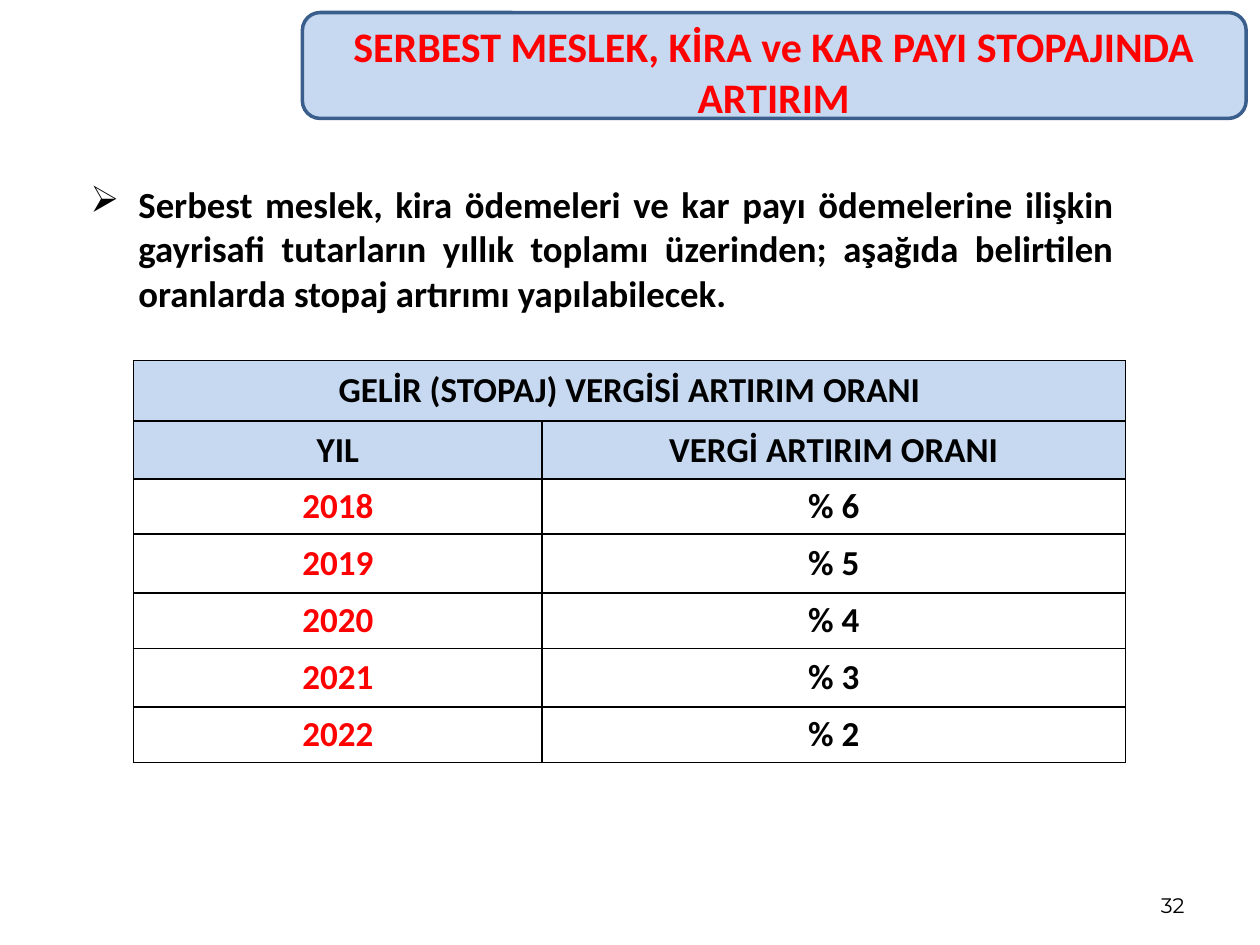
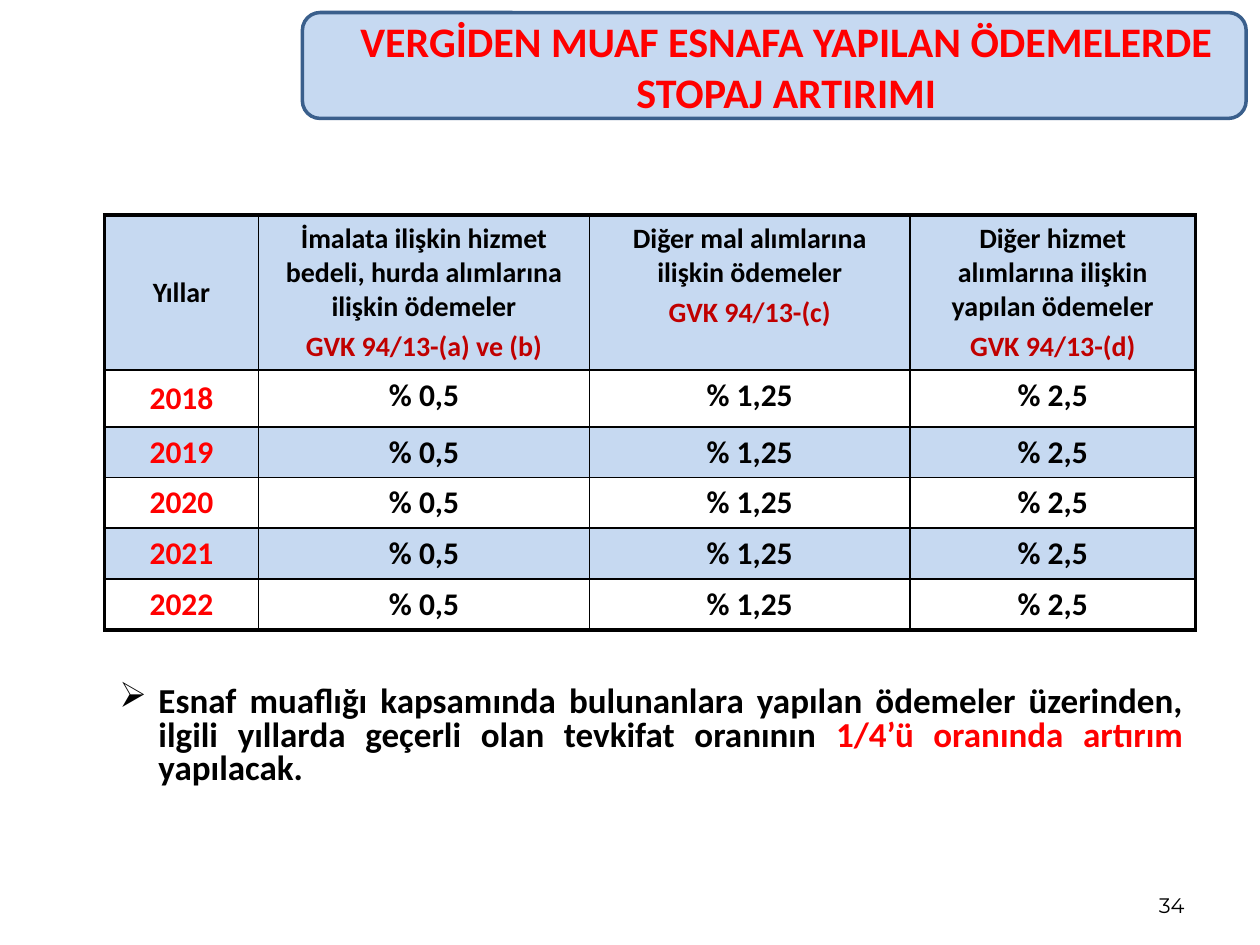
"""Two slides on withholding tax increase rates, each with a title band, a rate table and a note."""
import pptx
import pptx.dml.color
import pptx.enum.shapes
import pptx.enum.text
import pptx.oxml
import pptx.oxml.ns
import pptx.util

Pt = pptx.util.Pt
ALIGN = pptx.enum.text.PP_ALIGN
ANCHOR = pptx.enum.text.MSO_ANCHOR
COLOURS = {"band": "C6D9F1", "edge": "3A5F8C", "red": "FF0000",
           "dark_red": "C00000", "black": "000000"}
YEARS = ["2018", "2019", "2020", "2021", "2022"]


def rgb(name):
    return pptx.dml.color.RGBColor.from_string(COLOURS[name])


def style(paragraph, size, colour, align, font="Calibri", bold=True):
    paragraph.alignment = align
    for run in paragraph.runs:
        run.font.name = font
        run.font.size = Pt(size)
        run.font.bold = bold
        run.font.color.rgb = rgb(colour)


slides = [
    {
        "title": "SERBEST MESLEK, KİRA ve KAR PAYI STOPAJINDA ARTIRIM",
        "title_box": (178.6, 20.9, 527, 39.6),
        "number": "32",
        "note": ["Serbest meslek, kira ödemeleri ve kar payı ödemelerine ilişkin gayrisafi "
                 "tutarların yıllık toplamı üzerinden; aşağıda belirtilen oranlarda stopaj "
                 "artırımı yapılabilecek."],
        "note_box": (8.6, 100.1, 635, 83.5),
        "note_size": 21, "note_spacing": 1, "note_anchor": ANCHOR.MIDDLE,
        "note_indent": (63.4, 27.4),
        "table_at": (76.4, 205.9),
        "columns": [233.4, 333.4],
        "row_heights": [34.8, 33.1, 31.5, 33.7, 31.5, 33.7, 31.5],
        "rows": [["GELİR (STOPAJ) VERGİSİ ARTIRIM ORANI", ""], ["YIL", "VERGİ ARTIRIM ORANI"]]
                + [[year, f"% {6 - i}"] for i, year in enumerate(YEARS)],
        "header_rows": 2, "header_size": 20, "body_size": 20,
        "banded_rows": [0, 1], "value_anchor": ANCHOR.MIDDLE, "frame_width": 1,
    },
    {
        "title": "VERGİDEN MUAF ESNAFA YAPILAN ÖDEMELERDE STOPAJ ARTIRIMI",
        "title_box": (178.6, 15.1, 541.4, 45.4),
        "number": "34",
        "note": ["Esnaf muaflığı kapsamında bulunanlara yapılan ödemeler üzerinden, ilgili "
                 "yıllarda geçerli olan tevkifat oranının ",
                 "1/4’ü oranında artırım", " yapılacak."],
        "note_box": (54, 388.8, 629.3, 62.6),
        "note_size": 20, "note_spacing": 0.8, "note_anchor": ANCHOR.TOP,
        "note_indent": (29.5, 22.3),
        "table_at": (59.8, 122.9),
        "columns": [87.8, 189.4, 182.9, 163.4],
        "row_heights": [88.6, 32.4, 28.8, 29.1, 29.1, 29.1],
        "rows": [["Yıllar",
                  "İmalata ilişkin hizmet bedeli, hurda alımlarına ilişkin ödemeler\n"
                  "GVK 94/13-(a) ve (b)",
                  "Diğer mal alımlarına ilişkin ödemeler\nGVK 94/13-(c)",
                  "Diğer hizmet alımlarına ilişkin yapılan ödemeler\nGVK 94/13-(d)"]]
                + [[year, "% 0,5", "% 1,25", "% 2,5"] for year in YEARS],
        "header_rows": 1, "header_size": 16, "body_size": 18,
        "banded_rows": [0, 2, 4], "value_anchor": ANCHOR.TOP, "frame_width": 2.25,
    },
]

deck = pptx.Presentation()
deck.slide_width, deck.slide_height = Pt(720), Pt(540)

for content in slides:
    slide = deck.slides.add_slide(deck.slide_layouts[6])

    band = slide.shapes.add_shape(pptx.enum.shapes.MSO_SHAPE.ROUNDED_RECTANGLE,
                                  Pt(172.8), Pt(7.2), Pt(539.3), Pt(60.5))
    band.shadow.inherit = False
    band.fill.solid()
    band.fill.fore_color.rgb = rgb("band")
    band.line.color.rgb = rgb("edge")
    band.line.width = Pt(2)

    title = slide.shapes.add_textbox(*map(Pt, content["title_box"])).text_frame
    title.word_wrap = True
    title.vertical_anchor = ANCHOR.MIDDLE
    title.text = content["title"]
    style(title.paragraphs[0], 24, "red", ALIGN.CENTER)

    page_number = slide.shapes.add_textbox(Pt(516.2), Pt(491.8), Pt(167.8), Pt(36)).text_frame
    page_number.word_wrap = True
    page_number.vertical_anchor = ANCHOR.BOTTOM
    page_number.text = content["number"]
    style(page_number.paragraphs[0], 12, "black", ALIGN.RIGHT, "Montserrat", False)

    rows, columns = content["rows"], content["columns"]
    heights = content["row_heights"]
    rates = slide.shapes.add_table(len(rows), len(columns), *map(Pt, content["table_at"]),
                                   Pt(sum(columns)), Pt(sum(heights))).table
    rates.first_row = rates.horz_banding = False
    for column, width in zip(rates.columns, columns):
        column.width = Pt(width)
    for r, (row, height) in enumerate(zip(rows, heights)):
        rates.rows[r].height = Pt(height)
        is_header = r < content["header_rows"]
        for c, text in enumerate(row):
            cell = rates.cell(r, c)
            cell.text = text
            cell.vertical_anchor = ANCHOR.MIDDLE if c == 0 else content["value_anchor"]
            for p, paragraph in enumerate(cell.text_frame.paragraphs):
                if p:
                    paragraph.space_before = Pt(3.2)
                colour = "dark_red" if p else "red" if c == 0 and not is_header else "black"
                size = content["header_size"] if is_header else content["body_size"]
                style(paragraph, size, colour, ALIGN.CENTER)
            outer_sides = {"L": c == 0, "R": c == len(columns) - 1,
                           "T": r == 0, "B": r == len(rows) - 1}
            for side, is_outer in outer_sides.items():
                width = Pt(content["frame_width"] if is_outer else 1)
                cell._tc.get_or_add_tcPr().append(pptx.oxml.parse_xml(
                    f'<a:ln{side} {pptx.oxml.ns.nsdecls("a")} w="{width}"><a:solidFill>'
                    f'<a:srgbClr val="{COLOURS["black"]}"/></a:solidFill></a:ln{side}>'))
            if r in content["banded_rows"]:
                cell.fill.solid()
                cell.fill.fore_color.rgb = rgb("band")
            else:
                cell.fill.background()
    if content["header_rows"] == 2:
        rates.cell(0, 0).merge(rates.cell(0, len(columns) - 1))

    note = slide.shapes.add_textbox(*map(Pt, content["note_box"])).text_frame
    note.word_wrap = True
    note.vertical_anchor = content["note_anchor"]
    sentence = note.paragraphs[0]
    sentence.text = content["note"][0]
    for piece in content["note"][1:]:
        sentence.add_run().text = piece
    margin, hanging = content["note_indent"]
    properties = sentence._p.get_or_add_pPr()
    properties.set("marL", str(Pt(margin)))
    properties.set("indent", str(-Pt(hanging)))
    properties.append(pptx.oxml.parse_xml(
        f'<a:buChar {pptx.oxml.ns.nsdecls("a")} char="➢"/>'))
    sentence.line_spacing = content["note_spacing"]
    style(sentence, content["note_size"], "black", ALIGN.JUSTIFY)
    for highlight in sentence.runs[1:2]:
        highlight.font.color.rgb = rgb("red")

deck.save("out.pptx")
